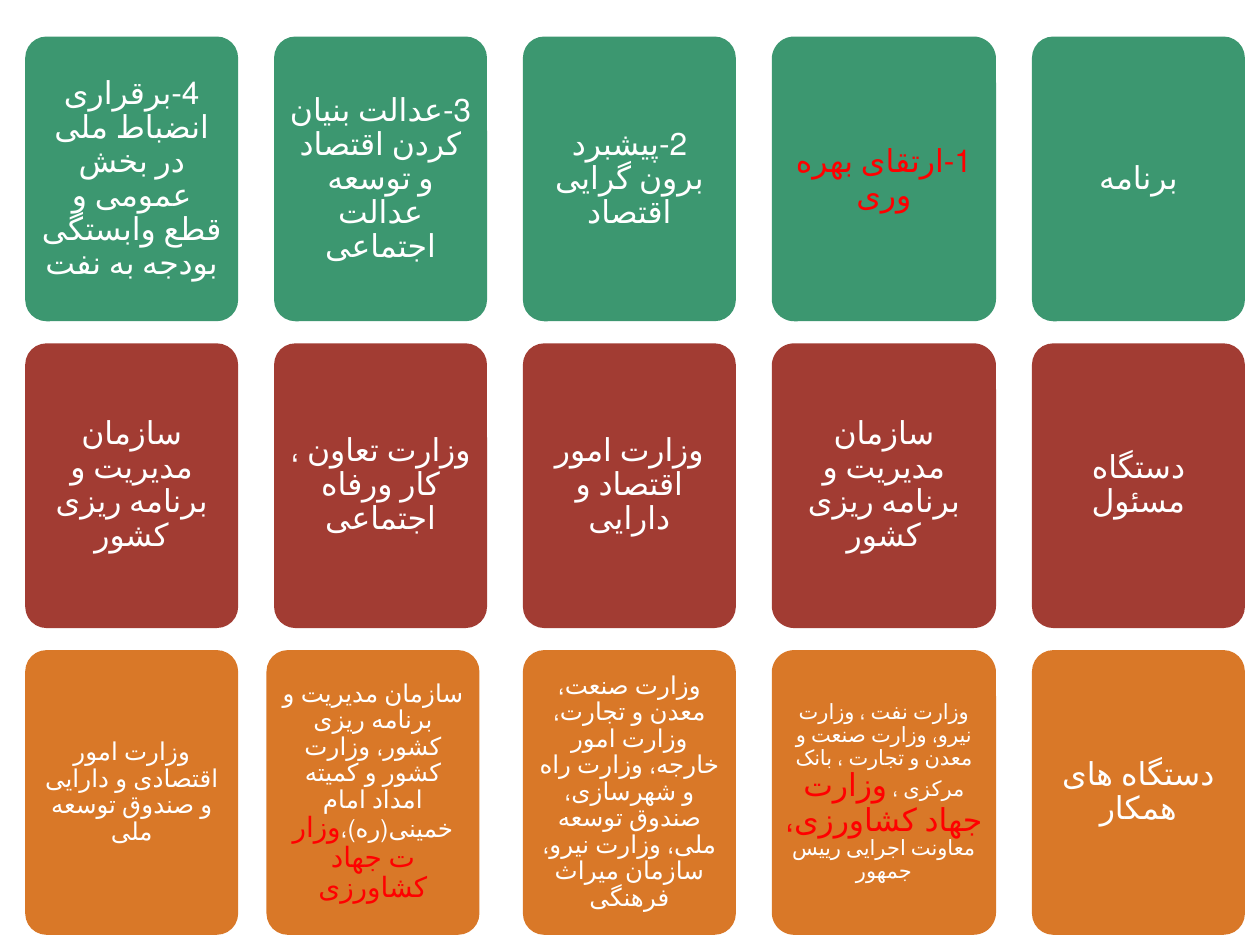
from dataclasses import dataclass
from itertools import accumulate

import pptx
import pptx.dml.color
import pptx.enum.lang
import pptx.enum.shapes
import pptx.enum.text
import pptx.util


@dataclass(frozen=True)
class Theme:
    font: str = "Times New Roman"
    programme: str = "3C9770"
    responsible: str = "A23C33"
    partners: str = "D97828"
    text: str = "FFFFFF"
    accent: str = "FF0000"
    large: int = 18
    medium: int = 16
    small: int = 14
    tiny: int = 12


THEME = Theme()


@dataclass(frozen=True)
class Phrase:
    text: str
    size: int = THEME.large
    color: str = THEME.text


@dataclass(frozen=True)
class Card:
    phrases: tuple[Phrase, ...]
    inset: float = 0.07
    shift: float = 0
    rtl: bool = True


@dataclass(frozen=True)
class Grid:
    left: float = 0.2
    right: float = 9.88
    top: float = 0.29
    bottom: float = 7.42
    widths: tuple[float, ...] = (1.69, 1.69, 1.69, 1.78, 1.69)
    height: float = 2.26
    rows: int = 3

    def lefts(self) -> list[float]:
        gap = (self.right - self.left - sum(self.widths)) / (len(self.widths) - 1)
        return list(accumulate((width + gap for width in self.widths[:-1]), initial=self.left))

    def row_top(self, row: int) -> float:
        pitch = (self.bottom - self.top - self.height) / (self.rows - 1)
        return self.top + row * pitch


def plain(text: str) -> Card:
    return Card((Phrase(text),))


PLANNING = plain("سازمان مدیریت و برنامه ریزی کشور")

ROWS = (
    (THEME.programme, (
        plain("4-برقراری انضباط ملی در بخش عمومی و قطع وابستگی بودجه به نفت"),
        plain("3-عدالت بنیان کردن اقتصاد و توسعه عدالت اجتماعی"),
        plain("2-پیشبرد برون گرایی اقتصاد"),
        Card((Phrase("1-ارتقای بهره وری", color=THEME.accent),)),
        plain("برنامه"),
    )),
    (THEME.responsible, (
        PLANNING,
        plain("وزارت تعاون ، کار ورفاه اجتماعی"),
        plain("وزارت امور اقتصاد و دارایی"),
        PLANNING,
        plain("دستگاه مسئول"),
    )),
    (THEME.partners, (
        Card((Phrase("وزارت امور اقتصادی و دارایی و صندوق توسعه ملی", THEME.small),), 0.06),
        Card((
            Phrase("سازمان مدیریت و برنامه ریزی کشور، وزارت کشور و کمیته امداد "
                   "امام خمینی(ره)،", THEME.small),
            Phrase("وزارت جهاد کشاورزی", THEME.medium, THEME.accent),
        ), 0.06, shift=-0.06),
        Card((Phrase("وزارت صنعت، معدن و تجارت، وزارت امور خارجه، وزارت راه و "
                     "شهرسازی، صندوق توسعه ملی، وزارت نیرو، سازمان میراث فرهنگی",
                     THEME.small),), 0.06),
        Card((
            Phrase("وزارت نفت ، وزارت نیرو، وزارت صنعت و معدن و تجارت ، "
                   "بانک مرکزی ، ", THEME.tiny),
            Phrase("وزارت جهاد کشاورزی، ", THEME.large, THEME.accent),
            Phrase("معاونت اجرایی رییس جمهور", THEME.tiny),
        ), 0.05),
        Card((Phrase("دستگاه های همکار"),), rtl=False),
    )),
)


def style_font(font: pptx.text.text.Font, phrase: Phrase) -> None:
    font.name = THEME.font
    font.size = pptx.util.Pt(phrase.size)
    font.color.rgb = pptx.dml.color.RGBColor.from_string(phrase.color)


def write_phrases(frame: pptx.text.text.TextFrame, card: Card) -> None:
    frame.word_wrap = True
    frame.vertical_anchor = pptx.enum.text.MSO_ANCHOR.MIDDLE
    inset = pptx.util.Inches(card.inset)
    frame.margin_left = frame.margin_right = inset
    frame.margin_top = frame.margin_bottom = inset
    paragraph = frame.paragraphs[0]
    paragraph.alignment = pptx.enum.text.PP_ALIGN.CENTER
    paragraph.line_spacing = 0.9
    if card.rtl:
        paragraph._p.get_or_add_pPr().set("rtl", "1")
    for phrase in card.phrases:
        run = paragraph.add_run()
        run.text = phrase.text
        run.font.language_id = pptx.enum.lang.MSO_LANGUAGE_ID.FARSI
        if len(card.phrases) > 1:
            style_font(run.font, phrase)
    if len(card.phrases) == 1:
        style_font(paragraph.font, card.phrases[0])


def draw_card(slide: pptx.slide.Slide, card: Card, color: str,
              left: float, top: float, width: float, height: float) -> None:
    box = slide.shapes.add_shape(
        pptx.enum.shapes.MSO_SHAPE.ROUNDED_RECTANGLE,
        *(pptx.util.Inches(length) for length in (left + card.shift, top, width, height)),
    )
    box.adjustments[0] = 0.1
    box.shadow.inherit = False
    box.fill.solid()
    box.fill.fore_color.rgb = pptx.dml.color.RGBColor.from_string(color)
    box.line.fill.background()
    write_phrases(box.text_frame, card)


def main() -> None:
    deck = pptx.Presentation()
    deck.slide_width = pptx.util.Inches(10)
    deck.slide_height = pptx.util.Inches(7.5)
    slide = deck.slides.add_slide(deck.slide_layouts[6])
    grid = Grid()
    for row, (color, cards) in enumerate(ROWS):
        for card, left, width in zip(cards, grid.lefts(), grid.widths):
            draw_card(slide, card, color, left, grid.row_top(row), width, grid.height)
    deck.save("out.pptx")


if __name__ == "__main__":
    main()
